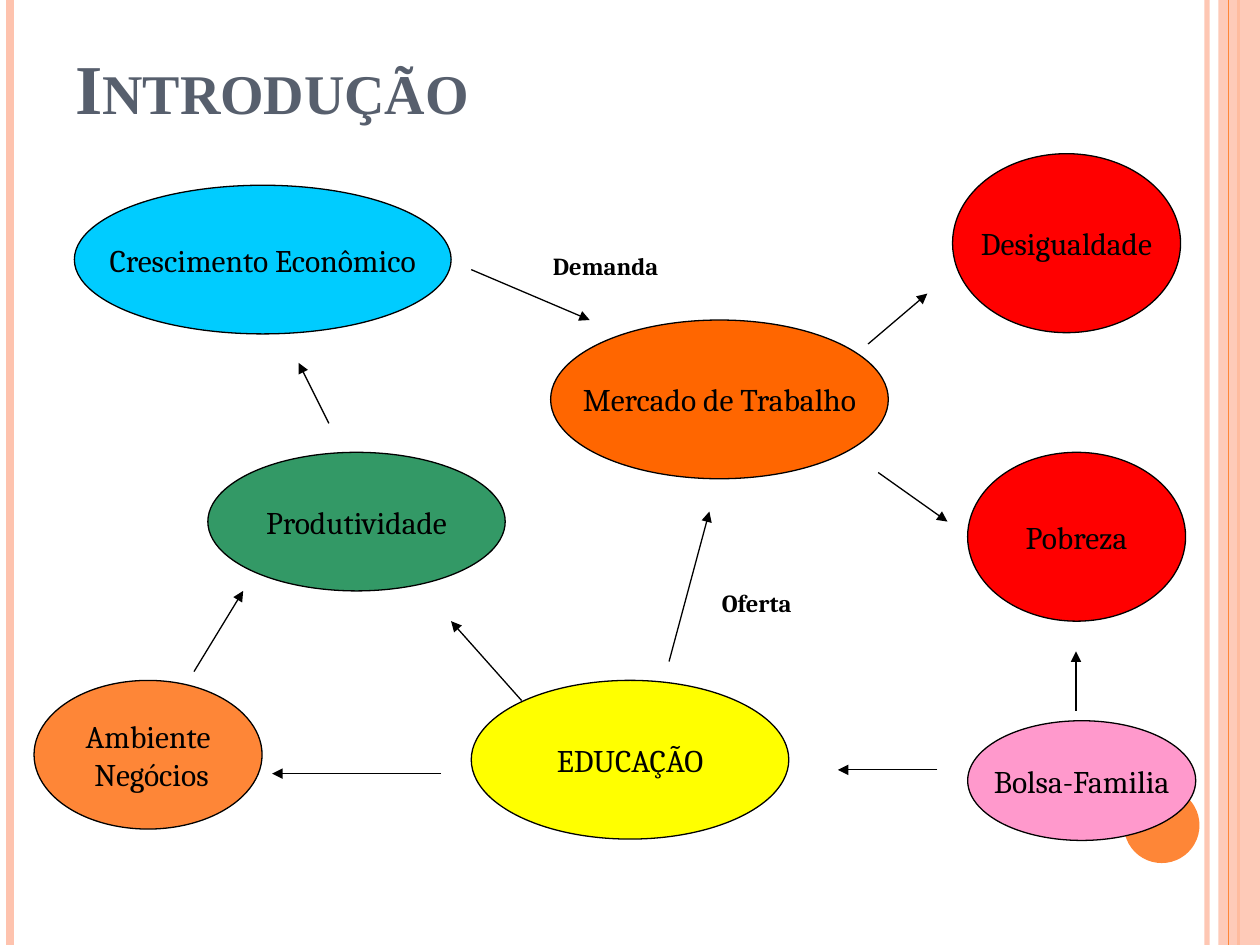
import pptx
import pptx.util
import pptx.dml.color
import pptx.enum.shapes
import pptx.enum.text
import pptx.oxml.ns
from lxml import etree

Pt = pptx.util.Pt
MSO = pptx.enum.shapes.MSO_SHAPE
ALIGN = pptx.enum.text.PP_ALIGN
ANCHOR = pptx.enum.text.MSO_ANCHOR
qn = pptx.oxml.ns.qn

COLORS = {
    "black": "000000", "slate": "575F6D", "peach": "FEC3AE", "orange": "FE8637",
    "yellow": "FFFF00", "market": "FF6600", "red": "FF0000", "green": "339966",
    "sky": "00CCFF", "pink": "FF99CC",
}
RGB = {k: pptx.dml.color.RGBColor.from_string(v) for k, v in COLORS.items()}

prs = pptx.Presentation()
prs.slide_width, prs.slide_height = pptx.util.Inches(10), pptx.util.Inches(7.5)
COL, ROW = prs.slide_width / 100, prs.slide_height / 75  # grid of 100 by 75
s = prs.slides.add_slide(prs.slide_layouts[6])


def add_line(x1, y1, x2, y2, color="black", width=0.75, opacity=100, arrow=False):
    c = s.shapes.add_connector(pptx.enum.shapes.MSO_CONNECTOR.STRAIGHT,
                               int(x1 * COL), int(y1 * ROW), int(x2 * COL), int(y2 * ROW))
    c.line.color.rgb, c.line.width = RGB[color], Pt(width)
    if opacity < 100:
        clr = c.line._ln.find(".//" + qn("a:srgbClr"))
        etree.SubElement(clr, qn("a:alpha"), val=str(opacity * 1000))
    if arrow:
        etree.SubElement(c.line._ln, qn("a:tailEnd"), type="triangle")
    etree.SubElement(c._element.spPr, qn("a:effectLst"))


def add_box(x, y, w, h, text="", shape=None, fill=None, outline=False, frame=None, font=None):
    box = [int(x * COL), int(y * ROW), int(w * COL), int(h * ROW)]
    if shape is None:
        sp = s.shapes.add_textbox(*box)
    else:
        sp = s.shapes.add_shape(shape, *box)
        sp.shadow.inherit = False
        sp.fill.solid()
        sp.fill.fore_color.rgb = RGB[fill]
        if outline:
            sp.line.color.rgb, sp.line.width = RGB["black"], Pt(0.75)
        else:
            sp.line.fill.background()
    tf = sp.text_frame
    for name, value in (frame or {}).items():
        setattr(tf, name, value)
    for i, line in enumerate(text.split("\n") if text else []):
        p = tf.paragraphs[0] if i == 0 else tf.add_paragraph()
        p.alignment = ALIGN.CENTER if shape else ALIGN.LEFT
        r = p.add_run()
        r.text = line
        r.font.color.rgb = RGB["black"]
        for name, value in (font or {}).items():
            setattr(r.font, name, value)
    return sp


# Side stripes and corner dot
add_line(95.8, 0, 95.8, 75, "peach", 3, 93)
add_line(0.8, 0, 0.8, 75, "peach", 4.5)
add_line(98.3, 0, 98.3, 75, "orange", 1.5)
band = add_box(96.7, 0, 3.3, 75, shape=MSO.RECTANGLE, fill="peach")
etree.SubElement(band._element.spPr.find(".//" + qn("a:srgbClr")), qn("a:alpha"), val="87000")
add_line(97.5, 0, 97.5, 75, "orange")
add_box(89.2, 62.5, 6, 6, shape=MSO.OVAL, fill="orange")

# Title in small capitals
title = add_box(5, 3, 90, 7.7, "Introdução",
                frame={"word_wrap": True, "vertical_anchor": ANCHOR.BOTTOM},
                font={"name": "Times New Roman", "size": Pt(40), "bold": True})
r = title.text_frame.paragraphs[0].runs[0]
r.font.color.rgb = RGB["slate"]
r._r.get_or_add_rPr().set("cap", "small")

# Concepts
for text, fill, x, y, w, h in [
    ("EDUCAÇÃO", "yellow", 37.4, 54, 25.2, 12.6),
    ("Mercado de Trabalho", "market", 43.7, 25.4, 26.8, 12.6),
    ("Pobreza", "red", 76.8, 35.9, 17.3, 13.4),
    ("Produtividade", "green", 16.5, 35.9, 23.6, 11),
    ("Crescimento Econômico", "sky", 5.9, 14.7, 29.9, 11.8),
    ("Desigualdade", "red", 75.6, 12.2, 18.1, 14.2),
    ("Bolsa-Familia", "pink", 76.8, 57.2, 18.1, 9.5),
    ("Ambiente\n Negócios", "orange", 2.7, 54, 18.1, 11.8),
]:
    add_box(x, y, w, h, text, MSO.OVAL, fill, outline=True,
            frame={"word_wrap": False, "vertical_anchor": ANCHOR.MIDDLE},
            font={"name": "Cambria", "size": Pt(18)})

# Arrows between concepts
for ends in [
    (53.1, 52.5, 56.3, 40.6),
    (41.4, 55.6, 35.8, 49.3),
    (26.1, 33.6, 23.7, 28.8),
    (37.4, 21.4, 46.8, 25.4),
    (68.9, 27.3, 73.6, 23.3),
    (69.7, 37.5, 75.2, 41.4),
    (85.4, 56.4, 85.4, 51.7),
    (35, 61.4, 21.6, 61.4),
    (74.4, 61.1, 66.5, 61.1),
    (15.4, 53.3, 19.3, 46.9),
]:
    add_line(*ends, arrow=True)

# Arrow labels
for text, x, y, w in [("Oferta", 56.3, 46.2, 10.2), ("Demanda", 42.9, 19.4, 13.4)]:
    add_box(x, y, w, 3.4, text, frame={"word_wrap": True},
            font={"name": "Cambria", "size": Pt(14), "bold": True})

prs.save("out.pptx")
